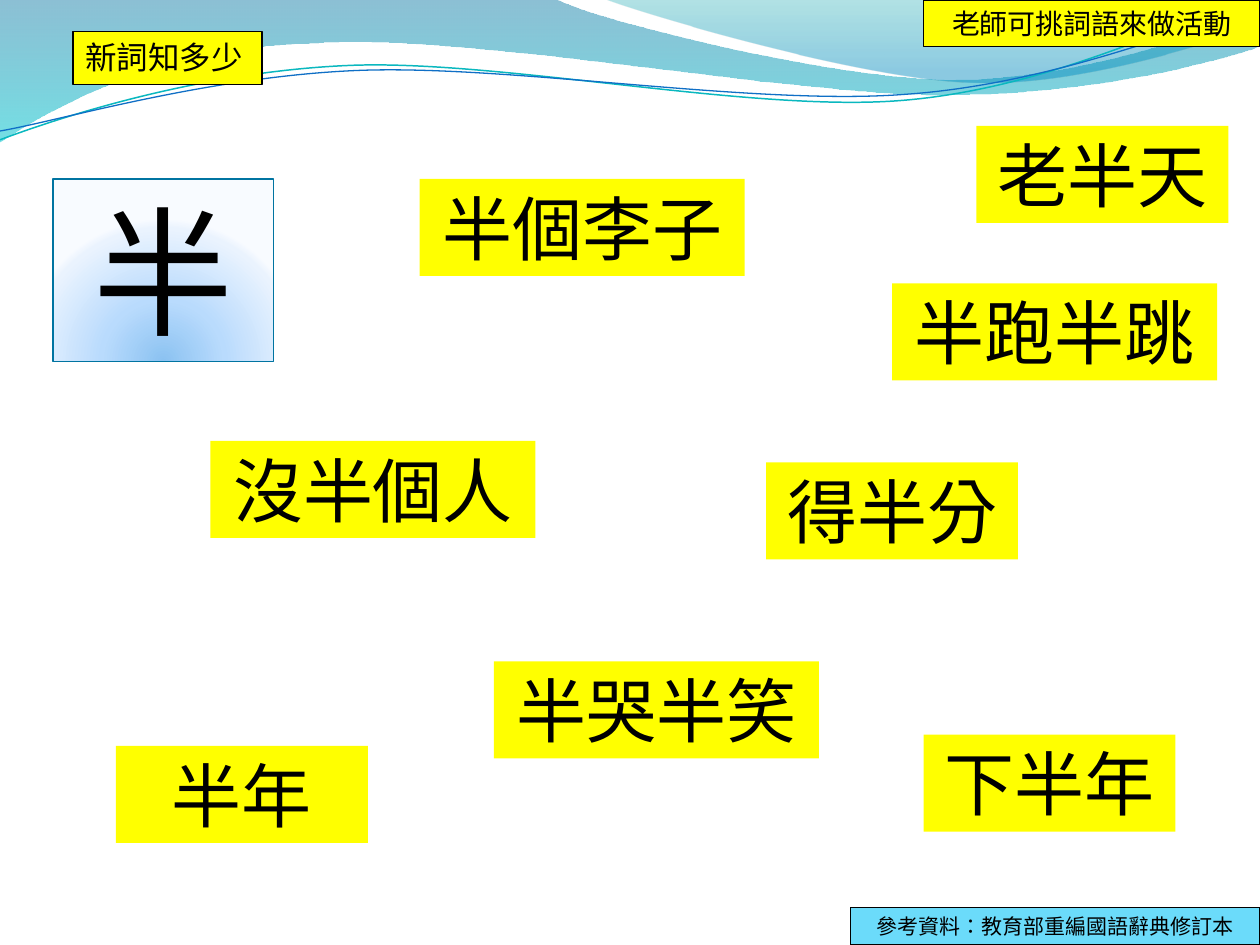
import lxml.etree
import pptx
import pptx.dml.color
import pptx.enum.shapes
import pptx.enum.text
import pptx.oxml.ns
import pptx.util

COLORS = {
    "black": "000000", "yellow": "FFFF00", "sky": "6BDBFA",
    "blue": "0074A1", "cyan": "00C6CF", "teal": "00A1A9", "azure": "008BBF",
    "teal line": "0AB8BF", "blue line": "0F6FC6",
    "glow": "8BC2F1", "glow mid": "B9DBFD", "glow pale": "EAF3FE", "glow edge": "F8FBFF",
}
FONT = "Noto Sans CJK SC"

# Two-number points are straight segments, six-number points are Bezier curves.
WAVES = [
    ([(0, 0), (4.4, -0.01), (4.76, 0.17, 6.64, 0.63, 7.58, 0.63),
      (8.53, 0.63, 9.58, 0.26, 10, 0.09), (10.01, 0.36),
      (9.83, 0.44, 8.7, 0.76, 7.46, 0.75), (6.22, 0.75, 3.82, 0.28, 2.57, 0.34),
      (1.29, 0.36, 0.46, 0.83, -0.01, 1.13), (0, 0)],
     [(0, "blue", 45), (100, "cyan", 55)]),
    ([(4.79, -0.01), (5.09, 0.11, 6.82, 0.62, 7.69, 0.65),
      (8.56, 0.69, 9.61, 0.32, 10, 0.21), (10, 0), (4.79, -0.01)],
     [(0, "teal", 30), (80, "azure", 45)]),
]
RIPPLES = [
    ([(0, 1.11), (0.48, 0.93, 1.58, 0.57, 2.77, 0.52),
      (3.95, 0.47, 5.93, 0.89, 7.13, 0.8), (8.33, 0.71, 9.38, 0.15, 9.98, -0.02)],
     "teal line", 0.85),
    ([(0, 1.04), (0.47, 0.96, 1.64, 0.61, 2.83, 0.56),
      (4.03, 0.51, 5.97, 0.84, 7.17, 0.75), (8.36, 0.67, 9.41, 0.21, 10, 0.06)],
     "blue line", 0.75),
]
WORDS = [
    ("沒半個人", 1.67, 3.5), ("下半年", 7.33, 5.83), ("半個李子", 3.33, 1.42),
    ("半年", 0.92, 5.92), ("得半分", 6.08, 3.67), ("半跑半跳", 7.08, 2.25),
    ("半哭半笑", 3.92, 5.25), ("老半天", 7.75, 1),
]
KEY_CHARACTER = ("半", (0.42, 1.42, 1.75, 1.45))
KEY_STOPS = [(0, "glow", 100), (43, "glow mid", 100),
             (93, "glow pale", 100), (100, "glow edge", 100)]
LABELS = [
    ("新詞知多少", (0.58, 0.25, 1.5, 0.42), 18, "yellow", "LEFT"),
    ("老師可挑詞語來做活動", (7.33, 0, 2.67, 0.37), 16, "yellow", "CENTER"),
    ("參考資料：教育部重編國語辭典修訂本", (6.75, 7.2, 3.25, 0.3), 12, "sky", "CENTER"),
]


def color(name):
    return pptx.dml.color.RGBColor.from_string(COLORS[name])


def add_element(parent, tag, **attributes):
    return lxml.etree.SubElement(
        parent, pptx.oxml.ns.qn(tag), {key: str(value) for key, value in attributes.items()})


def set_gradient(shape, stops, radial=False):
    shape.fill.solid()
    properties = shape.element.spPr
    solid = properties.find(pptx.oxml.ns.qn("a:solidFill"))
    gradient = add_element(properties, "a:gradFill", rotWithShape=1)
    properties.replace(solid, gradient)
    stop_list = add_element(gradient, "a:gsLst")
    for position, name, opacity in stops:
        stop = add_element(stop_list, "a:gs", pos=position * 1000)
        stop_color = add_element(stop, "a:srgbClr", val=COLORS[name])
        add_element(stop_color, "a:alpha", val=opacity * 1000)
    if radial:
        circle = add_element(gradient, "a:path", path="circle")
        add_element(circle, "a:fillToRect", l=50000, t=130000, r=50000, b=-30000)
    else:
        add_element(gradient, "a:lin", ang=5400000, scaled=1)


def set_line(shape, name, width):
    shape.line.color.rgb = color(name)
    shape.line.width = pptx.util.Pt(width)


def add_curve(slide, segments, close):
    points = [
        (pptx.util.Inches(segment[index]), pptx.util.Inches(segment[index + 1]))
        for segment in segments for index in range(0, len(segment), 2)]
    builder = slide.shapes.build_freeform(*points[0])
    builder.add_line_segments(points[1:], close=close)
    shape = builder.convert_to_shape()
    shape.shadow.inherit = False
    steps = iter(list(shape.element.iter(pptx.oxml.ns.qn("a:lnTo"))))
    for segment in segments[1:]:
        step = next(steps)
        if len(segment) == 6:
            curve = add_element(step.getparent(), "a:cubicBezTo")
            step.getparent().replace(step, curve)
            for control in (step, next(steps), next(steps)):
                curve.append(control[0])
                if control.getparent() is not None:
                    control.getparent().remove(control)
    return shape


def add_card(slide, text, box, size, fill, alignment="CENTER"):
    shape = slide.shapes.add_shape(
        pptx.enum.shapes.MSO_SHAPE.RECTANGLE, *map(pptx.util.Inches, box))
    shape.shadow.inherit = False
    shape.fill.solid()
    shape.fill.fore_color.rgb = color(fill)
    shape.line.fill.background()
    frame = shape.text_frame
    frame.word_wrap = True
    frame.auto_size = pptx.enum.text.MSO_AUTO_SIZE.SHAPE_TO_FIT_TEXT
    frame.vertical_anchor = pptx.enum.text.MSO_ANCHOR.TOP
    paragraph = frame.paragraphs[0]
    paragraph.alignment = pptx.enum.text.PP_ALIGN[alignment]
    run = paragraph.add_run()
    run.text = text
    run.font.size = pptx.util.Pt(size)
    run.font.name = FONT
    run.font.color.rgb = color("black")
    properties = run.font._element
    properties.set("lang", "zh-TW")
    add_element(properties, "a:ea", typeface=FONT)
    return shape


def main():
    presentation = pptx.Presentation()
    presentation.slide_width = pptx.util.Inches(10)
    presentation.slide_height = pptx.util.Inches(7.5)
    slide = presentation.slides.add_slide(presentation.slide_layouts[6])

    for segments, stops in WAVES:
        wave = add_curve(slide, segments, True)
        set_gradient(wave, stops)
        wave.line.fill.background()
    for segments, name, width in RIPPLES:
        ripple = add_curve(slide, segments, False)
        ripple.fill.background()
        set_line(ripple, name, width)

    for text, left, top in WORDS:
        width = 2.58 if len(text) == 4 else 2
        add_card(slide, text, (left, top, width, 0.77), 40, "yellow")

    text, box = KEY_CHARACTER
    key_card = add_card(slide, text, box, 80, "glow")
    set_gradient(key_card, KEY_STOPS, radial=True)
    set_line(key_card, "blue", 0.75)

    for text, box, size, fill, alignment in LABELS:
        label = add_card(slide, text, box, size, fill, alignment)
        set_line(label, "black", 0.75)

    presentation.save("out.pptx")


if __name__ == "__main__":
    main()
